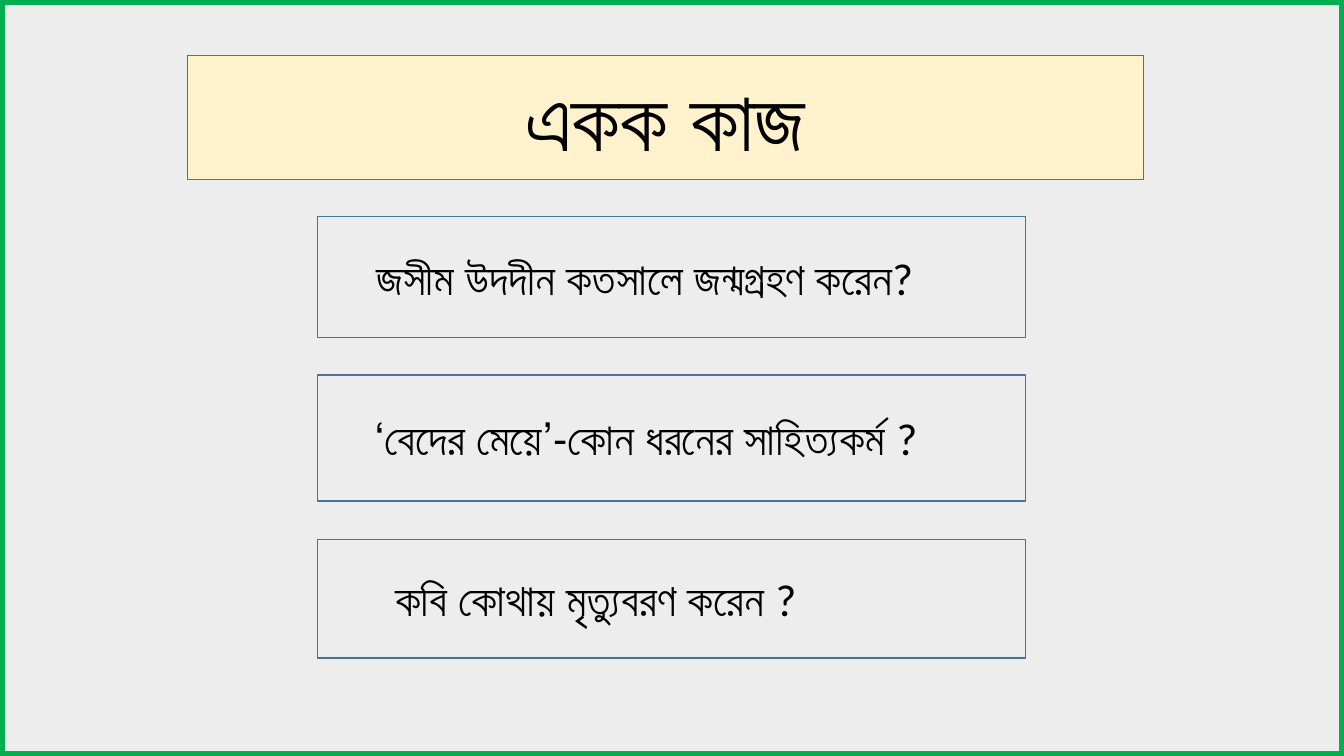
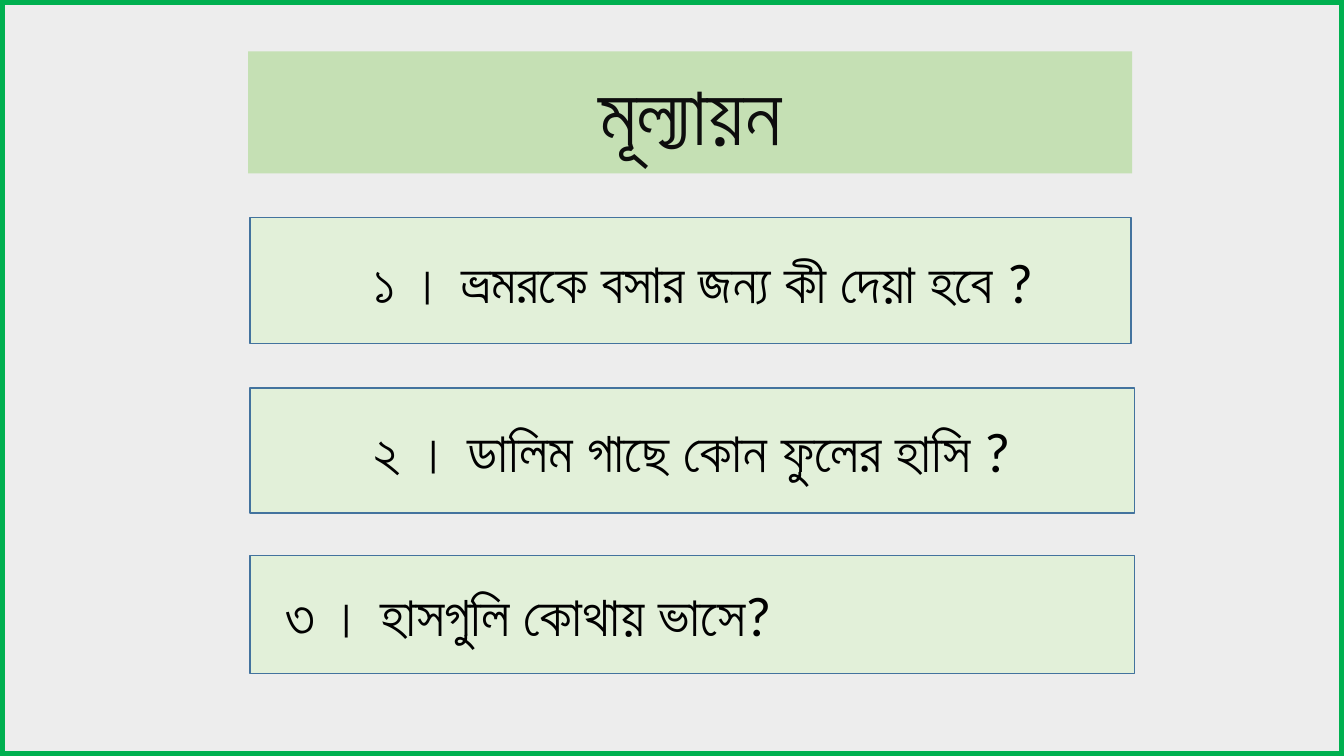
from pptx import Presentation
from pptx.dml.color import RGBColor
from pptx.enum.shapes import MSO_SHAPE
from pptx.enum.text import MSO_ANCHOR, MSO_AUTO_SIZE, PP_ALIGN
from pptx.util import Inches, Pt

RECT = MSO_SHAPE.RECTANGLE
MIDDLE = MSO_ANCHOR.MIDDLE
NO_FIT = MSO_AUTO_SIZE.NONE
LEFT, CENTER = PP_ALIGN.LEFT, PP_ALIGN.CENTER

FONT = "Calibri"
SLIDE_W, SLIDE_H = 13.33, 7.5
INSET = 0.1
COLORS = {
    "page": "EDEDED",
    "frame": "00B050",
    "outline": "43739E",
    "cream": "FFF2CC",
    "green": "C5E0B4",
    "pale_green": "E2F0D9",
    "text": "000000",
    "soft_text": "0D0D0D",
}

# Question rows: text, left, top, width, height, indent, alignment
TASKS = [
    ("জসীম উদদীন কতসালে জন্মগ্রহণ করেন?", 3.15, 2.15, 7.02, 1.2, 0.48, LEFT),
    ("‘বেদের মেয়ে’-কোন ধরনের সাহিত্যকর্ম ?", 3.15, 3.72, 7.02, 1.25, 0.45, LEFT),
    ("কবি কোথায় মৃত্যুবরণ করেন ?", 3.15, 5.35, 7.02, 1.18, 0.67, LEFT),
]
QUIZ = [
    ("১ । ভ্রমরকে বসার জন্য কী দেয়া হবে ?", 2.48, 2.16, 8.74, 1.25, 0.25, CENTER),
    ("২ । ডালিম গাছে কোন ফুলের হাসি ?", 2.48, 3.85, 8.77, 1.24, 0, CENTER),
    ("৩ । হাসগুলি কোথায় ভাসে?", 2.48, 5.51, 8.77, 1.17, 0.25, LEFT),
]


def rgb(name):
    return RGBColor.from_string(COLORS[name])


def style_box(sp, fill, line=None, width=1):
    """Set fill and outline; None means no paint."""
    if fill:
        sp.fill.solid()
        sp.fill.fore_color.rgb = rgb(fill)
    else:
        sp.fill.background()
    if line:
        sp.line.color.rgb = rgb(line)
        sp.line.width = Pt(width)
    else:
        sp.line.fill.background()


def set_text(sp, text, size, color="text", align=CENTER, indent=0, bold=False):
    tf = sp.text_frame
    tf.word_wrap = True
    tf.auto_size = NO_FIT
    tf.vertical_anchor = MIDDLE
    tf.margin_left = Inches(INSET + indent)
    tf.margin_right = Inches(INSET)
    tf.text = text
    p = tf.paragraphs[0]
    p.alignment = align
    p.font.name = FONT
    p.font.size = Pt(size)
    p.font.bold = bold
    p.font.color.rgb = rgb(color)


def add_box(s, x, y, w, h, fill, line, width=1):
    sp = s.shapes.add_shape(RECT, Inches(x), Inches(y), Inches(w), Inches(h))
    sp.shadow.inherit = False
    style_box(sp, fill, line, width)
    return sp


def add_title(s, text, at, fill, line=None, color="text", bold=False):
    sp = s.shapes.title
    sp.left, sp.top, sp.width, sp.height = (Inches(v) for v in at)
    style_box(sp, fill, line)
    set_text(sp, text, 60, color, bold=bold)


def add_questions(s, rows, fill, size):
    for text, x, y, w, h, indent, align in rows:
        sp = add_box(s, x, y, w, h, fill, "outline")
        set_text(sp, text, size, align=align, indent=indent)


def add_framed_slide(prs):
    s = prs.slides.add_slide(prs.slide_layouts[5])
    add_box(s, 0, 0, SLIDE_W, SLIDE_H, None, "frame", 7.5)
    return s


def main():
    prs = Presentation()
    prs.slide_width, prs.slide_height = Inches(SLIDE_W), Inches(SLIDE_H)

    # Shared page colour
    page = prs.slide_master.background.fill
    page.solid()
    page.fore_color.rgb = rgb("page")

    # Individual work
    s = add_framed_slide(prs)
    add_title(s, "একক কাজ", (1.86, 0.55, 9.48, 1.23), "cream", "outline", bold=True)
    add_questions(s, TASKS, "page", 32)

    # Evaluation
    s = add_framed_slide(prs)
    add_title(s, "মূল্যায়ন", (2.46, 0.51, 8.77, 1.21), "green", color="soft_text")
    add_questions(s, QUIZ, "pale_green", 40)

    prs.save("out.pptx")


if __name__ == "__main__":
    main()
